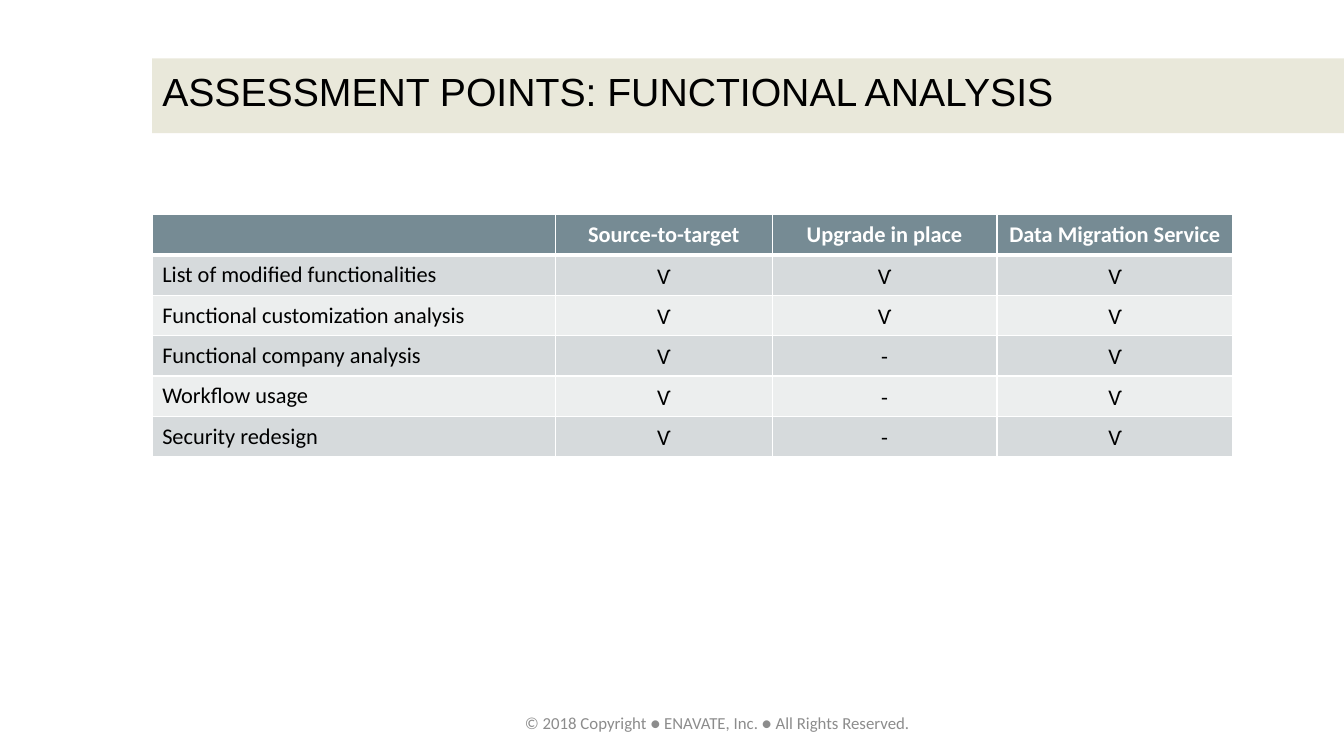
from lxml.etree import SubElement
from pptx import Presentation
from pptx.dml.color import RGBColor
from pptx.enum.shapes import MSO_SHAPE
from pptx.enum.text import MSO_ANCHOR, MSO_AUTO_SIZE, PP_ALIGN
from pptx.oxml.ns import qn
from pptx.util import Pt

BLACK = RGBColor(0x00, 0x00, 0x00)
WHITE = RGBColor(0xFF, 0xFF, 0xFF)
GREY = RGBColor(0x8C, 0x8C, 0x8C)
SAND = RGBColor(0xE1, 0xDF, 0xCB)
SLATE = RGBColor(0x76, 0x8B, 0x94)
BANDS = (RGBColor(0xD6, 0xDA, 0xDC), RGBColor(0xEC, 0xEE, 0xEE))

LEFT = 108.7
SLIDE_WIDTH, SLIDE_HEIGHT = 960, 540
COLUMN_WIDTHS = (288, 154.8, 160.6, 168.5)
ROW_HEIGHT = 28.8

HEADINGS = ("", "Source-to-target", "Upgrade in place", "Data Migration Service")
ASSESSMENTS = (
    ("List of modified functionalities", "Ѵ", "Ѵ", "Ѵ"),
    ("Functional customization analysis", "Ѵ", "Ѵ", "Ѵ"),
    ("Functional company analysis", "Ѵ", "-", "Ѵ"),
    ("Workflow usage", "Ѵ", "-", "Ѵ"),
    ("Security redesign", "Ѵ", "-", "Ѵ"),
)


def write(frame, text, *, size, color, font="Calibri", bold=False,
          align=PP_ALIGN.LEFT, spacing=1.0):
    paragraph = frame.paragraphs[0]
    paragraph.text = text
    paragraph.alignment = align
    paragraph.line_spacing = spacing
    paragraph.font.name = font
    paragraph.font.size = Pt(size)
    paragraph.font.bold = bold
    paragraph.font.color.rgb = color


def add_title_band(slide):
    band = slide.shapes.add_shape(MSO_SHAPE.RECTANGLE, Pt(LEFT), Pt(41.8),
                                  Pt(SLIDE_WIDTH - LEFT), Pt(53.3))
    band.shadow.inherit = False
    band.line.fill.background()
    band.fill.solid()
    band.fill.fore_color.rgb = SAND
    tint = band.fill._xPr.find(".//" + qn("a:srgbClr"))
    SubElement(tint, qn("a:alpha"), val="70000")
    # Place the band behind the title
    slide.shapes._spTree.insert(2, band._element)


def add_title(slide, text):
    title = slide.shapes.title
    title.left, title.top = Pt(LEFT), Pt(40.3)
    title.width, title.height = Pt(SLIDE_WIDTH - LEFT), Pt(54)
    frame = title.text_frame
    frame.auto_size = MSO_AUTO_SIZE.NONE
    frame.vertical_anchor = MSO_ANCHOR.MIDDLE
    write(frame, text, size=28, color=BLACK, font="Arial", spacing=0.9)


def add_footer(slide, text):
    footer = slide.shapes.add_textbox(Pt(367.9), Pt(505.4), Pt(292.3), Pt(21.6))
    footer.text_frame.word_wrap = False
    write(footer.text_frame, text, size=12, color=GREY)


def set_borders(cell, top=1, bottom=1):
    properties = cell._tc.get_or_add_tcPr()
    for side, width in (("L", 1), ("R", 1), ("T", top), ("B", bottom)):
        border = SubElement(properties, qn(f"a:ln{side}"), w=str(Pt(width)))
        fill = SubElement(border, qn("a:solidFill"))
        SubElement(fill, qn("a:srgbClr"), val=str(WHITE))


def fill_cell(cell, text, row, column):
    is_heading = row == 0
    is_label = column == 0
    set_borders(cell, top=3 if row == 1 else 1, bottom=3 if is_heading else 1)
    cell.fill.solid()
    cell.fill.fore_color.rgb = SLATE if is_heading else BANDS[(row - 1) % 2]
    cell.vertical_anchor = (MSO_ANCHOR.MIDDLE if is_heading or is_label
                            else MSO_ANCHOR.BOTTOM)
    write(cell.text_frame, text, size=16, bold=is_heading,
          color=WHITE if is_heading else BLACK,
          align=PP_ALIGN.LEFT if is_label else PP_ALIGN.CENTER)


def add_assessment_table(slide):
    rows = (HEADINGS,) + ASSESSMENTS
    table = slide.shapes.add_table(
        len(rows), len(HEADINGS), Pt(LEFT), Pt(153.4),
        Pt(sum(COLUMN_WIDTHS)), Pt(ROW_HEIGHT * len(rows))).table
    for column, width in zip(table.columns, COLUMN_WIDTHS):
        column.width = Pt(width)
    for row, texts in enumerate(rows):
        table.rows[row].height = Pt(ROW_HEIGHT)
        for column, text in enumerate(texts):
            fill_cell(table.cell(row, column), text, row, column)


def main():
    deck = Presentation()
    deck.slide_width, deck.slide_height = Pt(SLIDE_WIDTH), Pt(SLIDE_HEIGHT)
    slide = deck.slides.add_slide(deck.slide_layouts[5])

    # Heading
    add_title_band(slide)
    add_title(slide, "ASSESSMENT POINTS: FUNCTIONAL ANALYSIS")

    # Comparison of migration approaches
    add_assessment_table(slide)

    # Copyright line
    add_footer(slide, "© 2018 Copyright ● ENAVATE, Inc. ● All Rights Reserved.")

    deck.save("out.pptx")


if __name__ == "__main__":
    main()
